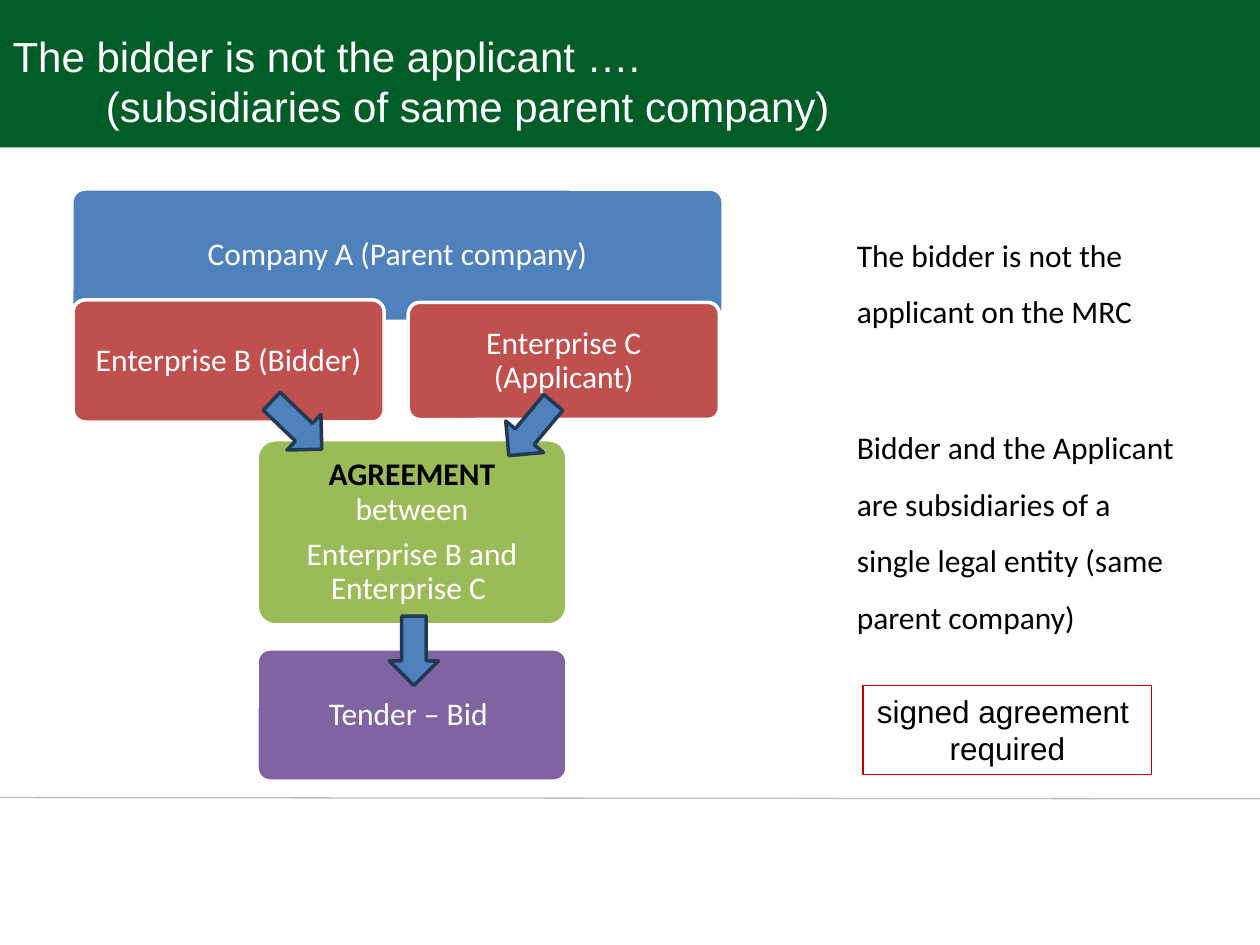
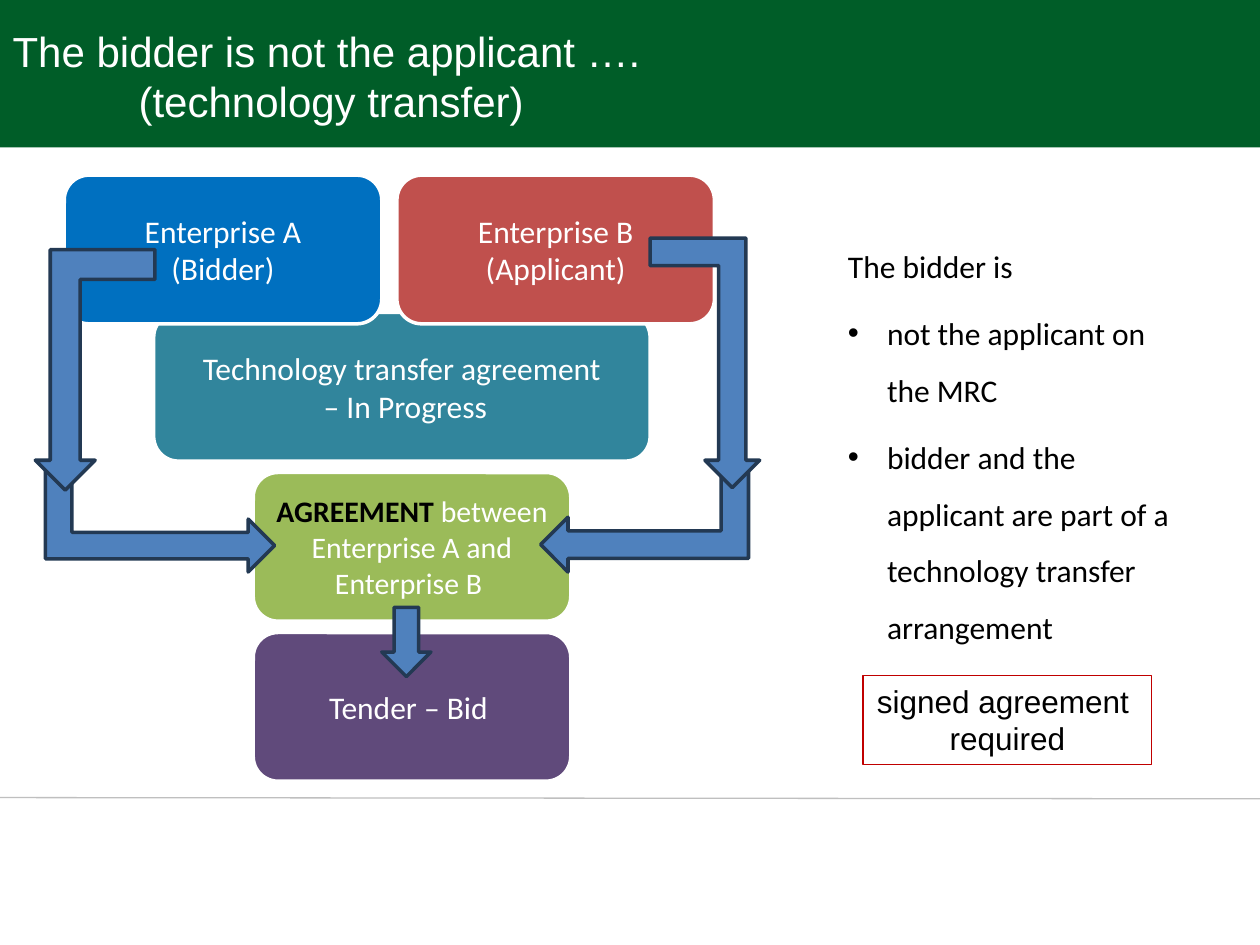
from lxml import etree
from pptx import Presentation
from pptx.dml.color import RGBColor
from pptx.enum.shapes import MSO_CONNECTOR, MSO_SHAPE
from pptx.enum.text import MSO_ANCHOR, MSO_AUTO_SIZE, PP_ALIGN
from pptx.oxml.ns import qn
from pptx.util import Inches, Pt

RECT = MSO_SHAPE.RECTANGLE
ROUND = MSO_SHAPE.ROUNDED_RECTANGLE
ARROW = MSO_SHAPE.RIGHT_ARROW
BENT = MSO_SHAPE.BENT_UP_ARROW
LINE = MSO_CONNECTOR.STRAIGHT
TOP, MIDDLE = MSO_ANCHOR.TOP, MSO_ANCHOR.MIDDLE
LEFT, CENTER = PP_ALIGN.LEFT, PP_ALIGN.CENTER
FIXED = MSO_AUTO_SIZE.NONE

WHITE = RGBColor(0xFF, 0xFF, 0xFF)
BLACK = RGBColor(0x00, 0x00, 0x00)
FOREST = RGBColor(0x00, 0x5D, 0x28)
GRAY = RGBColor(0xBF, 0xBF, 0xBF)
BLUE = RGBColor(0x4F, 0x81, 0xBD)
AZURE = RGBColor(0x00, 0x70, 0xC0)
NAVY = RGBColor(0x23, 0x39, 0x53)
BRICK = RGBColor(0xC0, 0x50, 0x4D)
RED = RGBColor(0xC0, 0x00, 0x00)
GREEN = RGBColor(0x9B, 0xBB, 0x59)
TEAL = RGBColor(0x31, 0x85, 0x9C)
MAUVE = RGBColor(0x80, 0x64, 0xA2)
PLUM = RGBColor(0x60, 0x4A, 0x7B)

COLS, ROWS = 10, 7.5
CELL = Inches(1)
HEAD = "The bidder is not the applicant …."


def grid(*cells):
    return [round(n * CELL) for n in cells]


def move(shape, *cells):
    shape.left, shape.top, shape.width, shape.height = grid(*cells)


def add_run(para, text, size, color, face="Calibri", bold=False):
    run = para.add_run()
    run.text = text
    font = run.font
    font.name, font.size, font.bold = face, Pt(size), bold
    font.color.rgb = color


def next_para(frame, index):
    return frame.add_paragraph() if index else frame.paragraphs[0]


def indent(para, left, first=0, mark=None):
    props = para._p.get_or_add_pPr()
    props.set("marL", str(grid(left)[0]))
    props.set("indent", str(grid(first)[0]))
    if mark:
        etree.SubElement(props, qn("a:buFont")).set("typeface", "Arial")
        etree.SubElement(props, qn("a:buChar")).set("char", mark)
    else:
        etree.SubElement(props, qn("a:buNone"))


def add_form(slide, kind, cells, fill, edge=None, width=2):
    form = slide.shapes.add_shape(kind, *grid(*cells))
    form.shadow.inherit = False
    form.fill.solid()
    form.fill.fore_color.rgb = fill
    if edge is None:
        form.line.fill.background()
    else:
        form.line.color.rgb = edge
        form.line.width = Pt(width)
    return form


def add_tile(slide, cells, fill, lines, size=18, tight=False):
    tile = add_form(slide, ROUND, cells, fill, WHITE)
    frame = tile.text_frame
    frame.word_wrap = True
    frame.vertical_anchor = MIDDLE
    if tight:
        tile.adjustments[0] = 0.1
        pad = grid(0.07)[0]
        frame.margin_left = frame.margin_right = pad
        frame.margin_top = frame.margin_bottom = pad
    for i, line in enumerate(lines):
        para = next_para(frame, i)
        para.alignment = CENTER
        if tight:
            para.line_spacing = 0.9
            para.space_before = Pt(6.3 if i else 0)
        for text, color in line:
            add_run(para, text, size, color, bold=color == BLACK)


def plain(*texts):
    return [[(text, WHITE)] for text in texts]


def add_arrow(slide, kind, cells, turn, flip=False):
    arrow = add_form(slide, kind, cells, BLUE, NAVY)
    arrow.rotation = turn
    if flip:
        arrow.element.spPr.xfrm.set("flipH", "1")


def add_note(slide, top):
    note = slide.shapes.add_textbox(*grid(6.85, top, 2.29, 0.71))
    note.line.color.rgb = RED
    note.line.width = Pt(0.75)
    frame = note.text_frame
    frame.word_wrap = False
    for i, text in enumerate(("signed agreement ", "required")):
        para = next_para(frame, i)
        para.alignment = CENTER
        add_run(para, text, 18, BLACK, "Arial")


def set_title(slide, top, wide, detail, inset):
    title = slide.shapes.title
    move(title, 0, top, wide, 0.91)
    frame = title.text_frame
    frame.auto_size = FIXED
    frame.vertical_anchor = TOP
    for i, (text, left) in enumerate(((HEAD, 0), (detail, inset))):
        para = next_para(frame, i)
        indent(para, left)
        para.alignment = LEFT
        add_run(para, text, 24, WHITE, "Arial")


def set_body(slide, cells, items, gap):
    body = slide.placeholders[1]
    move(body, *cells)
    frame = body.text_frame
    frame.auto_size = FIXED
    for i, (text, mark) in enumerate(items):
        para = next_para(frame, i)
        if mark:
            indent(para, 0.81, -0.31, mark)
        else:
            indent(para, 0.5)
        para.line_spacing = 1.5
        para.space_before = Pt(gap if i else 0)
        add_run(para, text, 18, BLACK)


def dress(slide):
    band = add_form(slide, RECT, (0, 0, COLS, 1.17), FOREST)
    rule = slide.shapes.add_connector(LINE, *grid(0, 6.33, COLS, 6.34))
    rule.line.color.rgb = GRAY
    rule.line.width = Pt(0.75)
    etree.SubElement(rule.element.spPr, qn("a:effectLst"))
    tree = slide.slide_layout.element.cSld.spTree
    for i, part in enumerate((band.element, rule.element)):
        part[0][0].set("id", str(20 + i))
        tree.insert(2 + i, part)


def fill_parent(slide):
    set_title(slide, 0.19, 8.54, "(subsidiaries of same parent company)", 0.74)
    set_body(slide, (6.2, 1.67, 3.31, 3.4), (
        ("The bidder is not the applicant on the MRC", None),
        ("Bidder and the Applicant are subsidiaries of a single legal entity "
         "(same parent company)", None)), 45)
    pact = [[("AGREEMENT ", BLACK), ("between", WHITE)],
            [("Enterprise B and Enterprise C ", WHITE)]]
    for cells, fill, lines in (
            ((0.57, 1.5, 5.17, 1.05), BLUE, plain("Company A (Parent company)")),
            ((0.58, 2.38, 2.47, 0.97), BRICK, plain("Enterprise B (Bidder)")),
            ((2.04, 3.49, 2.46, 1.47), GREEN, pact),
            ((2.04, 5.15, 2.46, 1.05), MAUVE, plain("Tender – Bid ")),
            ((3.24, 2.4, 2.47, 0.93), BRICK, plain("Enterprise C (Applicant)"))):
        add_tile(slide, cells, fill, lines, tight=True)
    for left, top, turn in ((2.08, 3.18, 43.7), (3.94, 3.21, 129.9), (3.01, 4.97, 90)):
        add_arrow(slide, ARROW, (left, top, 0.55, 0.39), turn)
    add_note(slide, 5.44)


def fill_tech(slide):
    set_title(slide, 0.15, 7.99, "(technology transfer)", 1)
    set_body(slide, (6.13, 1.76, 3.42, 3.4), (
        ("The bidder is", None),
        ("not the applicant on the MRC", "•"),
        ("bidder and the applicant are part of a technology transfer "
         "arrangement", "•")), 6)
    wide, high = 2.52, 1.18
    pact = [[("AGREEMENT", BLACK), (" between", WHITE)],
            [("Enterprise A and Enterprise B ", WHITE)]]
    add_tile(slide, (1.22, 2.48, 3.94, high), TEAL,
             plain("Technology transfer agreement", " – In Progress"))
    for left, top, fill, lines, size in (
            (0.51, 1.39, AZURE, plain("Enterprise A", "(Bidder)"), 18),
            (2.01, 3.75, GREEN, pact, 17),
            (3.15, 1.39, BRICK, plain("Enterprise B (Applicant)"), 18),
            (2.01, 5.02, PLUM, plain("Tender – Bid "), 18)):
        add_tile(slide, (left, top, wide, high), fill, lines, size)
    for cells, turn, flip in (
            ((4.68, 3.28, 0.87, 1.65), 270, True),
            ((5.16, 1.89, 0.87, 1.98), 180, True),
            ((0.85, 3.21, 0.84, 1.82), 90, False),
            ((0.28, 1.98, 0.95, 1.91), 180, False)):
        add_arrow(slide, BENT, cells, turn, flip)
    add_arrow(slide, ARROW, (2.95, 4.9, 0.55, 0.39), 90)
    add_note(slide, 5.36)


def main():
    deck = Presentation()
    deck.slide_width, deck.slide_height = grid(COLS, ROWS)
    layout = deck.slide_layouts[1]
    first, second = [deck.slides.add_slide(layout) for _ in range(2)]
    dress(first)
    fill_parent(first)
    fill_tech(second)
    deck.save("out.pptx")


if __name__ == "__main__":
    main()
